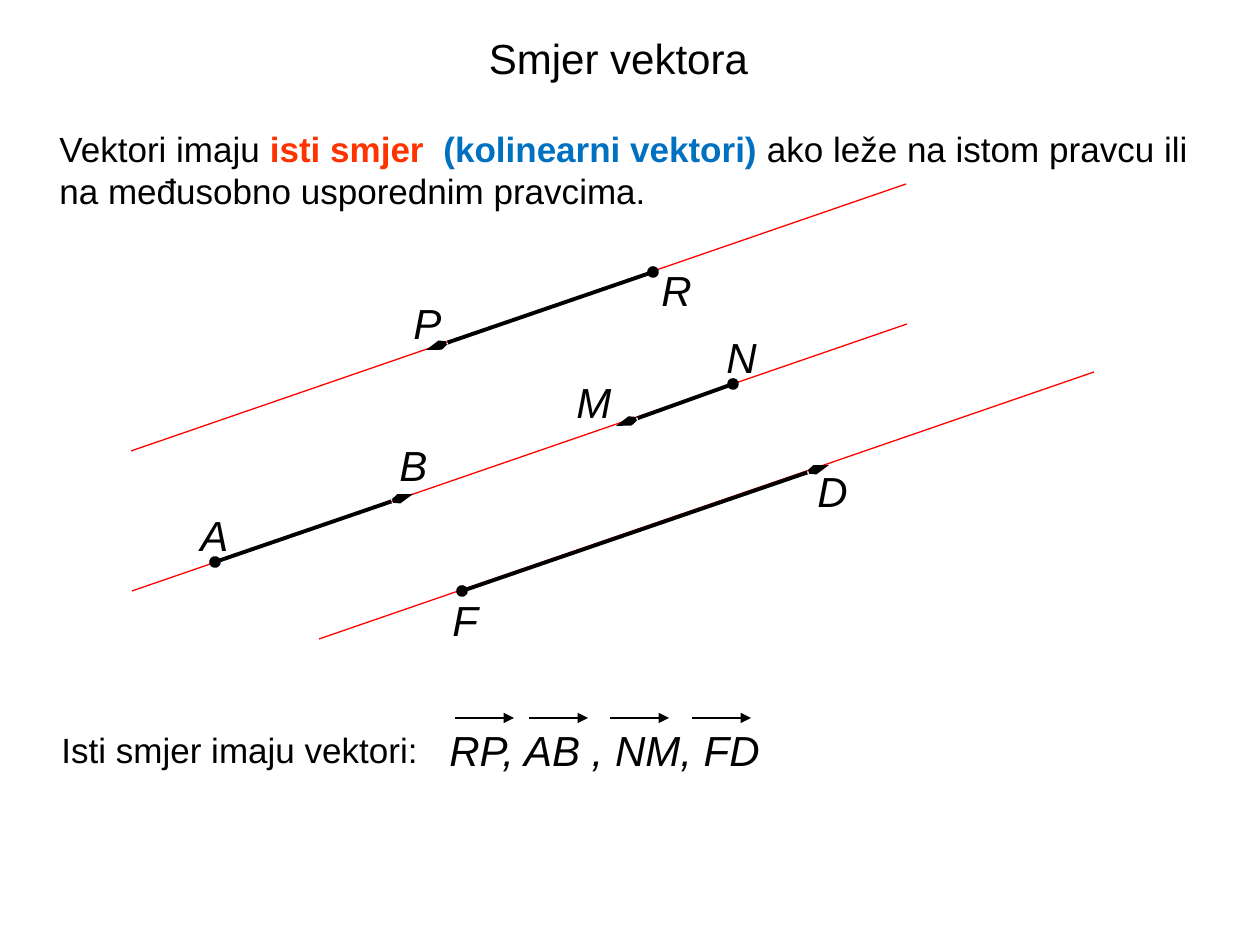
from lxml import etree
from pptx import Presentation
from pptx.dml.color import RGBColor
from pptx.enum.shapes import MSO_CONNECTOR
from pptx.enum.text import MSO_ANCHOR, PP_ALIGN
from pptx.oxml.ns import qn
from pptx.util import Emu, Pt

STRAIGHT = MSO_CONNECTOR.STRAIGHT
TOP, MIDDLE = MSO_ANCHOR.TOP, MSO_ANCHOR.MIDDLE
LEFT, CENTER = PP_ALIGN.LEFT, PP_ALIGN.CENTER
BLACK, RED, ORANGE, BLUE = "000000", "FF0000", "FF3300", "0070C0"
FONT = "Arial"

CARRIER_RUN, CARRIER_RISE = 775, 267
CARRIER_STARTS = [(131, 451), (132, 591), (319, 639)]
VECTORS = [
    ((215, 562), (413, 494)),
    ((733, 384), (616, 426)),
    ((462, 591), (829, 465)),
    ((653, 272), (426, 350)),
]
POINT_LABELS = [
    ("A", 188, 503, 52),
    ("B", 387, 433, 55),
    ("N", 714, 325, 59),
    ("M", 564, 370, 54),
    ("F", 440, 588, 74),
    ("D", 805, 459, 58),
    ("P", 401, 291, 42),
    ("R", 649, 258, 76),
]
OVERARROW_XS = [455, 529, 610, 692]
OVERARROW_Y, OVERARROW_LENGTH = 718, 59


def px(n):
    return Emu(round(n * 914400 / 126))


def color(value):
    return RGBColor.from_string(value)


def add_text(slide, box, runs, size, italic=False, align=LEFT, anchor=TOP, spacing=1.0):
    sp = slide.shapes.add_textbox(*map(px, box))
    tf = sp.text_frame
    tf.word_wrap = True
    tf.vertical_anchor = anchor
    p = tf.paragraphs[0]
    p.alignment = align
    p.line_spacing = spacing
    for text, fill, bold in runs:
        r = p.add_run()
        r.text = text
        r.font.name = FONT
        r.font.size = Pt(size)
        r.font.bold = bold
        r.font.italic = italic
        r.font.color.rgb = color(fill)


def add_line(slide, start, end, fill, width, head=None, tail=None):
    line = slide.shapes.add_connector(STRAIGHT, *map(px, (*start, *end)))
    line.line.color.rgb = color(fill)
    line.line.width = Pt(width)
    ln = line.line._get_or_add_ln()
    for tag, marker in (("a:headEnd", head), ("a:tailEnd", tail)):
        if marker:
            kind, w, length = marker
            etree.SubElement(ln, qn(tag), type=kind, w=w, len=length)
    etree.SubElement(line._element.spPr, qn("a:effectLst"))


def add_carrier(slide, start):
    x, y = start
    add_line(slide, start, (x + CARRIER_RUN, y - CARRIER_RISE), RED, 0.75)


def add_vector(slide, start, end):
    add_line(slide, start, end, BLACK, 2.25,
             head=("oval", "med", "med"), tail=("arrow", "sm", "lg"))


def add_overarrow(slide, x):
    add_line(slide, (x, OVERARROW_Y), (x + OVERARROW_LENGTH, OVERARROW_Y), BLACK, 1.5,
             tail=("triangle", "med", "med"))


def main():
    prs = Presentation()
    prs.slide_width, prs.slide_height = px(1260), px(945)
    slide = prs.slides.add_slide(prs.slide_layouts[6])

    add_text(slide, (83, -13, 1071, 142), [("Smjer vektora", BLACK, False)], 24,
             align=CENTER, anchor=MIDDLE)
    add_text(slide, (47, 121, 1166, 122), [
        ("Vektori imaju ", BLACK, False),
        ("isti smjer  ", ORANGE, True),
        ("(kolinearni vektori) ", BLUE, True),
        ("ako leže na istom pravcu ili na međusobno usporednim pravcima.", BLACK, False),
    ], 20)

    for start in CARRIER_STARTS:
        add_carrier(slide, start)
    for start, end in VECTORS:
        add_vector(slide, start, end)
    for letter, x, y, width in POINT_LABELS:
        add_text(slide, (x, y, width, 63), [(letter, BLACK, False)], 24, italic=True)

    add_text(slide, (49, 727, 626, 50), [("Isti smjer imaju vektori:", BLACK, False)], 20,
             spacing=0.9)
    add_text(slide, (437, 718, 509, 63), [("RP, AB , NM, FD", BLACK, False)], 24, italic=True)
    for x in OVERARROW_XS:
        add_overarrow(slide, x)

    prs.save("out.pptx")


if __name__ == "__main__":
    main()
